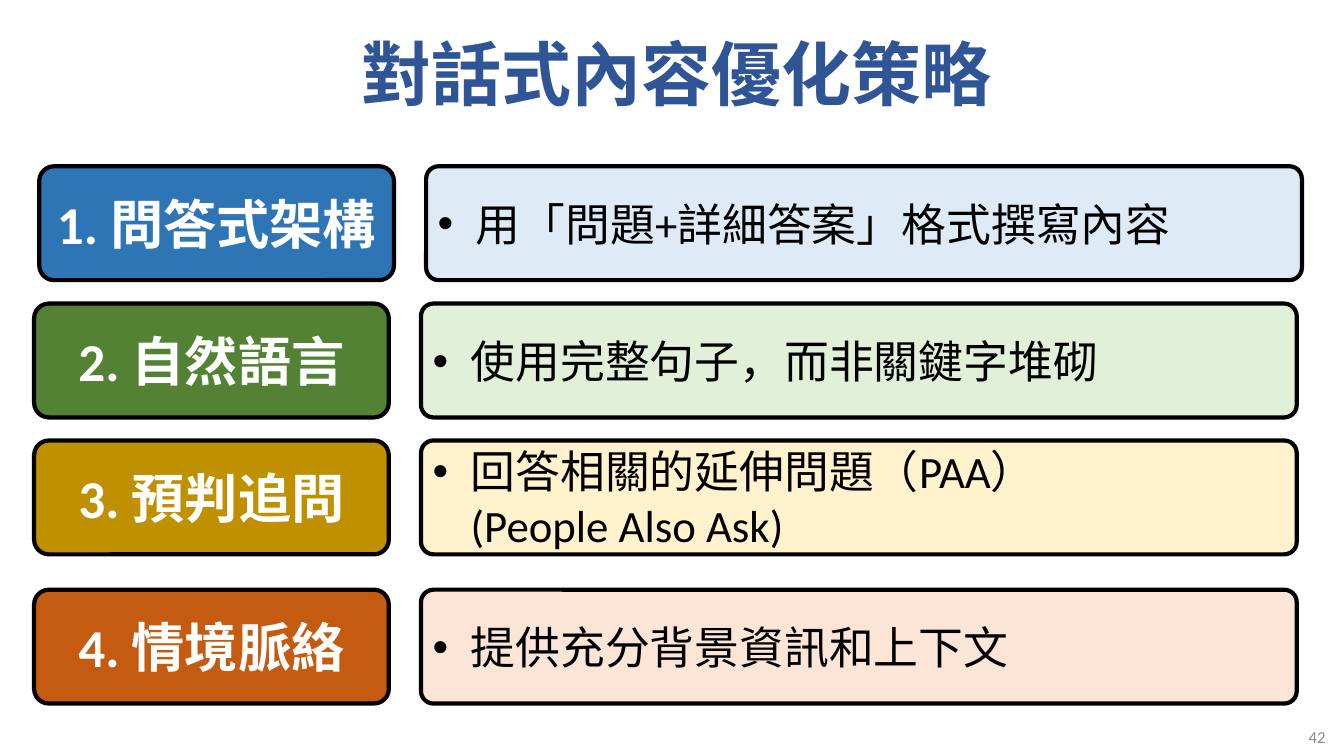
from lxml import etree
from pptx import Presentation
from pptx import util as u
from pptx.dml.color import RGBColor
from pptx.enum import shapes, text
from pptx.oxml.ns import qn

COLORS = {
    "title": "2F5597", "number": "8C8C8C", "line": "000000",
    "label": "FFFFFF", "body": "000000",
    "blue": "2E75B6", "pale_blue": "DEEBF7",
    "green": "548235", "pale_green": "E2F0D9",
    "gold": "BF9000", "pale_gold": "FFF2CC",
    "orange": "C55A11", "pale_orange": "FBE5D6",
}

# Left and top in cm, colour, label, description
STRATEGIES = [
    (0.99, 4.19, "blue", "1. 問答式架構", "用「問題+詳細答案」格式撰寫內容"),
    (0.86, 7.65, "green", "2. 自然語言", "使用完整句子，而非關鍵字堆砌"),
    (0.86, 11.1, "gold", "3. 預判追問", "回答相關的延伸問題（PAA）\n(People Also Ask)"),
    (0.86, 14.86, "orange", "4. 情境脈絡", "提供充分背景資訊和上下文"),
]
ROW_HEIGHT = 2.87
LABEL_WIDTH = 8.94
BODY_OFFSET, BODY_WIDTH = 9.75, 22.07


def rgb(name):
    return RGBColor.from_string(COLORS[name])


def write(sp, content, size, color, bold=False, align=text.PP_ALIGN.LEFT, margin=None):
    tf = sp.text_frame
    tf.word_wrap = True
    tf.auto_size = text.MSO_AUTO_SIZE.NONE
    tf.vertical_anchor = text.MSO_ANCHOR.MIDDLE
    if margin is not None:
        tf.margin_left = tf.margin_right = u.Cm(margin)
        tf.margin_top = tf.margin_bottom = 0
    p = tf.paragraphs[0]
    p.alignment = align
    for i, line in enumerate(content.split("\n")):
        if i:
            p.add_line_break()
        r = p.add_run()
        r.text = line
        r.font.name = "Calibri"
        r.font.size = u.Pt(size)
        r.font.bold = bold
        r.font.color.rgb = rgb(color)
    return p


def add_bullet(p, indent):
    pPr = p._p.get_or_add_pPr()
    pPr.set("marL", str(u.Cm(indent)))
    pPr.set("indent", str(-u.Cm(indent)))
    etree.SubElement(pPr, qn("a:buFont"), typeface="Arial")
    etree.SubElement(pPr, qn("a:buChar"), char="•")


def add_card(s, left, top, width, fill, radius):
    sp = s.shapes.add_shape(shapes.MSO_SHAPE.ROUNDED_RECTANGLE,
                            u.Cm(left), u.Cm(top), u.Cm(width), u.Cm(ROW_HEIGHT))
    sp.adjustments[0] = radius
    sp.shadow.inherit = False
    sp.fill.solid()
    sp.fill.fore_color.rgb = rgb(fill)
    sp.line.color.rgb = rgb("line")
    sp.line.width = u.Pt(3)
    return sp


def add_strategy(s, left, top, color, label, description):
    # Numbered label
    sp = add_card(s, left, top, LABEL_WIDTH, color, 0.13)
    write(sp, label, 38, "label", bold=True, align=text.PP_ALIGN.CENTER, margin=0)
    # Bulleted description
    sp = add_card(s, left + BODY_OFFSET, top, BODY_WIDTH, "pale_" + color, 0.11)
    p = write(sp, description, 32, "body", margin=0.2)
    add_bullet(p, 0.96)


def add_title(s, left, top, width, height):
    sp = s.shapes.title
    sp.left, sp.top, sp.width, sp.height = map(u.Cm, (left, top, width, height))
    write(sp, "對話式內容優化策略", 50, "title", bold=True, align=text.PP_ALIGN.CENTER)


def add_page_number(s, left, top, width, height):
    sp = s.shapes.add_textbox(*map(u.Cm, (left, top, width, height)))
    write(sp, "42", 12, "number", align=text.PP_ALIGN.RIGHT)


def main():
    prs = Presentation()
    prs.slide_width, prs.slide_height = u.Cm(33.87), u.Cm(19.05)
    s = prs.slides.add_slide(prs.slide_layouts[5])
    add_title(s, 1.47, 0.38, 31.17, 2.87)
    add_page_number(s, 30.99, 18.24, 2.67, 0.66)
    for strategy in STRATEGIES:
        add_strategy(s, *strategy)
    prs.save("out.pptx")


if __name__ == "__main__":
    main()
